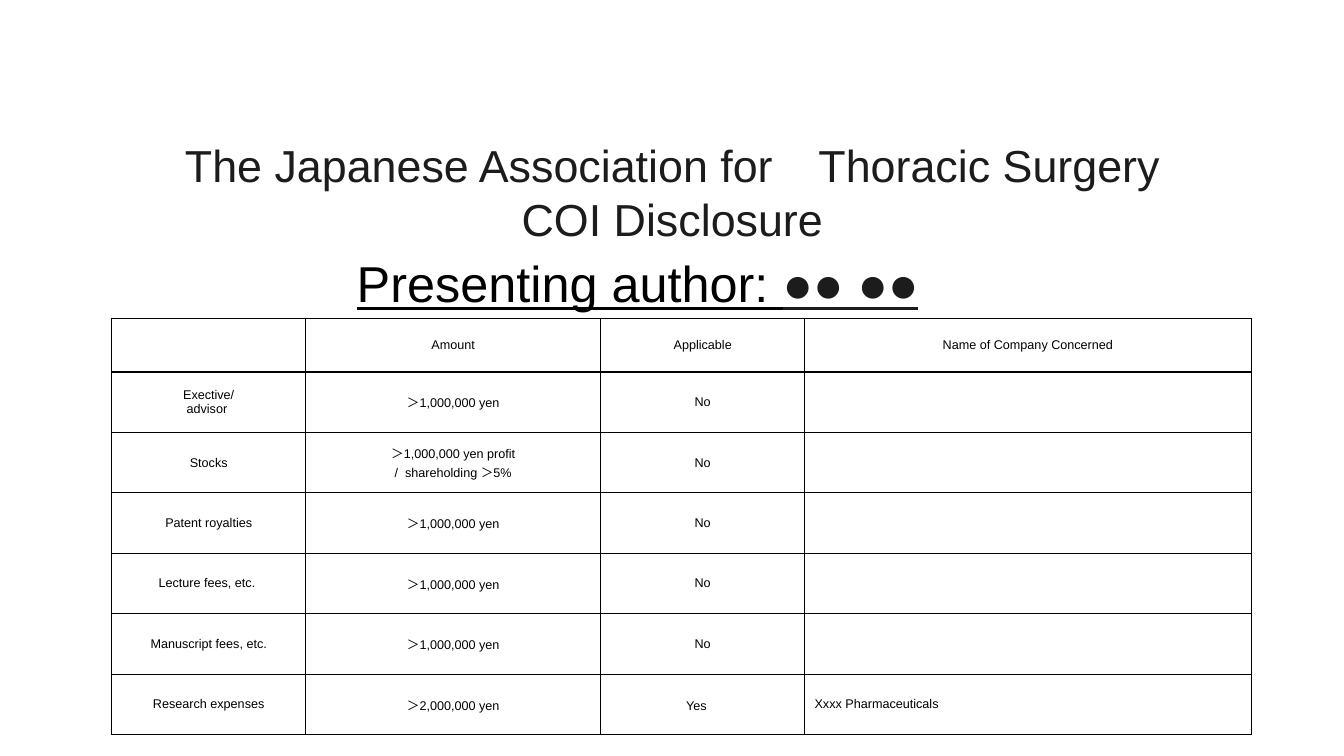
from pptx import Presentation
from pptx.dml.color import RGBColor
from pptx.enum.shapes import MSO_SHAPE
from pptx.enum.text import MSO_ANCHOR, PP_ALIGN
from pptx.oxml.ns import qn
from pptx.util import Inches, Pt
from lxml import etree

RECTANGLE = MSO_SHAPE.RECTANGLE
MIDDLE = MSO_ANCHOR.MIDDLE
LEFT, CENTER = PP_ALIGN.LEFT, PP_ALIGN.CENTER

COLORS = {"paper": "FFFFFF", "ink": "1C1C1C", "black": "000000"}
COLUMN_WIDTHS = [1.92, 2.93, 2.02, 4.43]
HEADER_HEIGHT, ROW_HEIGHT = 0.53, 0.6
MILLION = "＞1,000,000 yen"
DISCLOSURES = [
    ("", "Amount", "Applicable", "Name of Company Concerned"),
    ("Exective/\nadvisor ", MILLION, "No", ""),
    ("Stocks", "＞1,000,000 yen profit\n/  shareholding ＞5%", "No", ""),
    ("Patent royalties", MILLION, "No", ""),
    ("Lecture fees, etc. ", MILLION, "No", ""),
    ("Manuscript fees, etc.", MILLION, "No", ""),
    ("Research expenses", "＞2,000,000 yen", "Yes　", "Xxxx Pharmaceuticals"),
]


class SlideBuilder:
    font_name = "Arial"

    def __init__(self, page):
        self.page = page

    def color(self, name):
        return RGBColor.from_string(COLORS[name])

    def style(self, para, size, color, align):
        para.alignment = align
        para.font.name = self.font_name
        para.font.size = Pt(size)
        para.font.color.rgb = self.color(color)

    def title(self, text, left, top, width, height, size):
        box = self.page.shapes.add_shape(
            RECTANGLE, Inches(left), Inches(top), Inches(width), Inches(height))
        box.shadow.inherit = False
        box.fill.solid()
        box.fill.fore_color.rgb = self.color("paper")
        box.line.fill.background()
        frame = box.text_frame
        frame.word_wrap = True
        frame.vertical_anchor = MIDDLE
        frame.text = text
        for para in frame.paragraphs:
            self.style(para, size, "ink", CENTER)

    def author(self, spans, left, top, width, height, size):
        box = self.page.shapes.add_textbox(
            Inches(left), Inches(top), Inches(width), Inches(height))
        frame = box.text_frame
        frame.word_wrap = True
        frame.vertical_anchor = MIDDLE
        para = frame.paragraphs[0]
        for text, color in spans:
            span = para.add_run()
            span.text = text
            span.font.color.rgb = self.color(color)
        self.style(para, size, "black", LEFT)
        para.font.underline = True

    def borders(self, cell):
        properties = cell._tc.get_or_add_tcPr()
        for side in ("a:lnL", "a:lnR", "a:lnT", "a:lnB"):
            line = etree.SubElement(properties, qn(side), w=str(Pt(1)))
            fill = etree.SubElement(line, qn("a:solidFill"))
            etree.SubElement(fill, qn("a:srgbClr"), val=COLORS["black"])

    def cell(self, cell, text, size, align):
        self.borders(cell)
        cell.fill.background()
        cell.vertical_anchor = MIDDLE
        cell.margin_left = cell.margin_right = Inches(0.1)
        cell.margin_top = cell.margin_bottom = Inches(0.04)
        cell.text_frame.text = text
        for para in cell.text_frame.paragraphs:
            self.style(para, size, "black", align)

    def table(self, rows, left, top, size):
        heights = [HEADER_HEIGHT] + [ROW_HEIGHT] * (len(rows) - 1)
        table = self.page.shapes.add_table(
            len(rows), len(COLUMN_WIDTHS), Inches(left), Inches(top),
            Inches(sum(COLUMN_WIDTHS)), Inches(sum(heights))).table
        table.first_row = table.horz_banding = False
        for column, width in zip(table.columns, COLUMN_WIDTHS):
            column.width = Inches(width)
        for row, height in zip(table.rows, heights):
            row.height = Inches(height)
        for row_index, texts in enumerate(rows):
            for column_index, text in enumerate(texts):
                is_company = row_index > 0 and column_index == 3
                self.cell(table.cell(row_index, column_index), text, size,
                          LEFT if is_company else CENTER)


def main():
    deck = Presentation()
    deck.slide_width, deck.slide_height = Inches(13.33), Inches(7.5)
    builder = SlideBuilder(deck.slides.add_slide(deck.slide_layouts[6]))
    builder.title("The Japanese Association for　Thoracic Surgery\nCOI Disclosure",
                  0.92, 1.31, 11.5, 1.18, 32)
    builder.author([("Presenting author: ", "black"), ("●● ●●", "ink")],
                   3.44, 2.45, 8.16, 0.71, 36)
    builder.table(DISCLOSURES, 1.11, 3.16, 9)
    deck.save("out.pptx")


if __name__ == "__main__":
    main()
